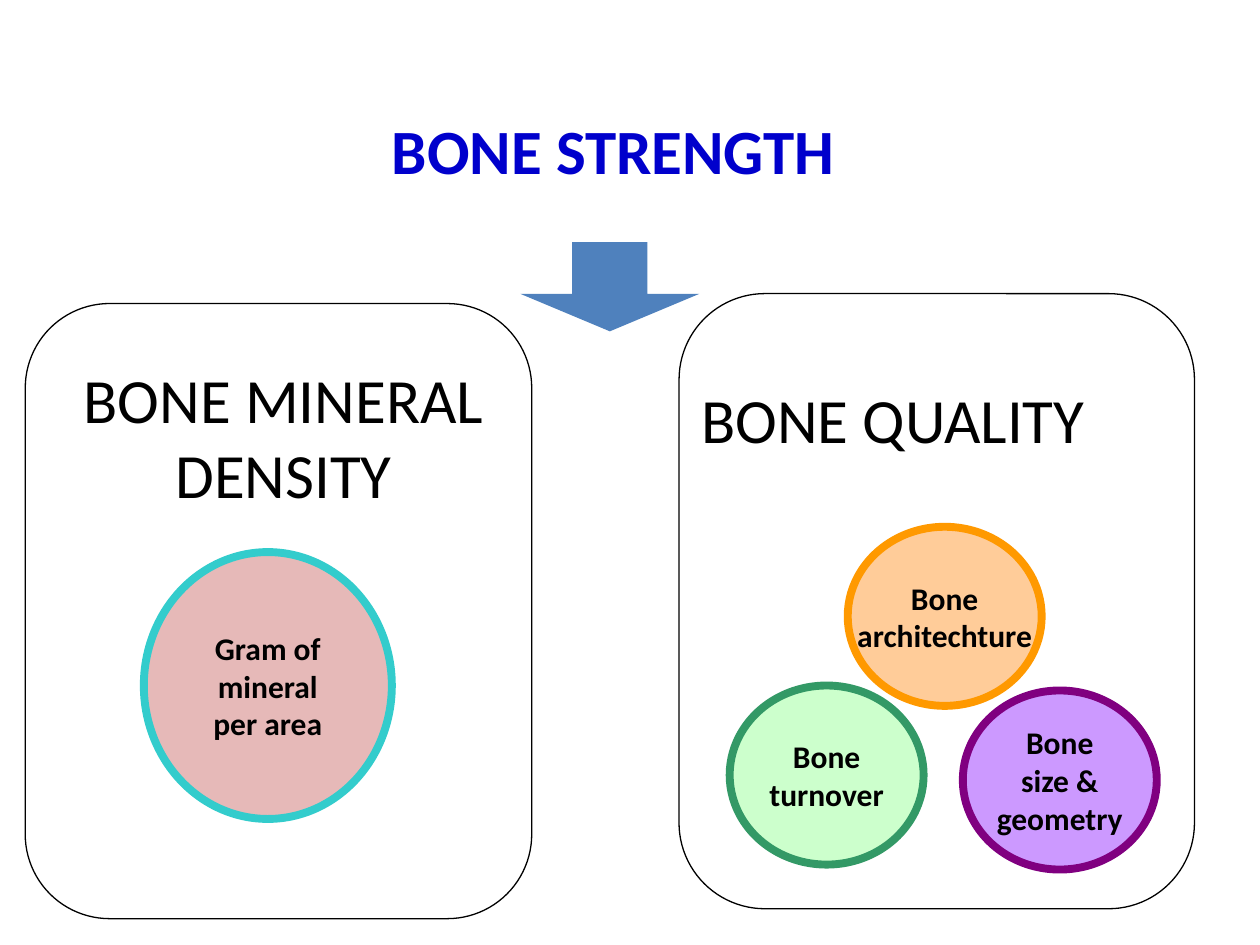
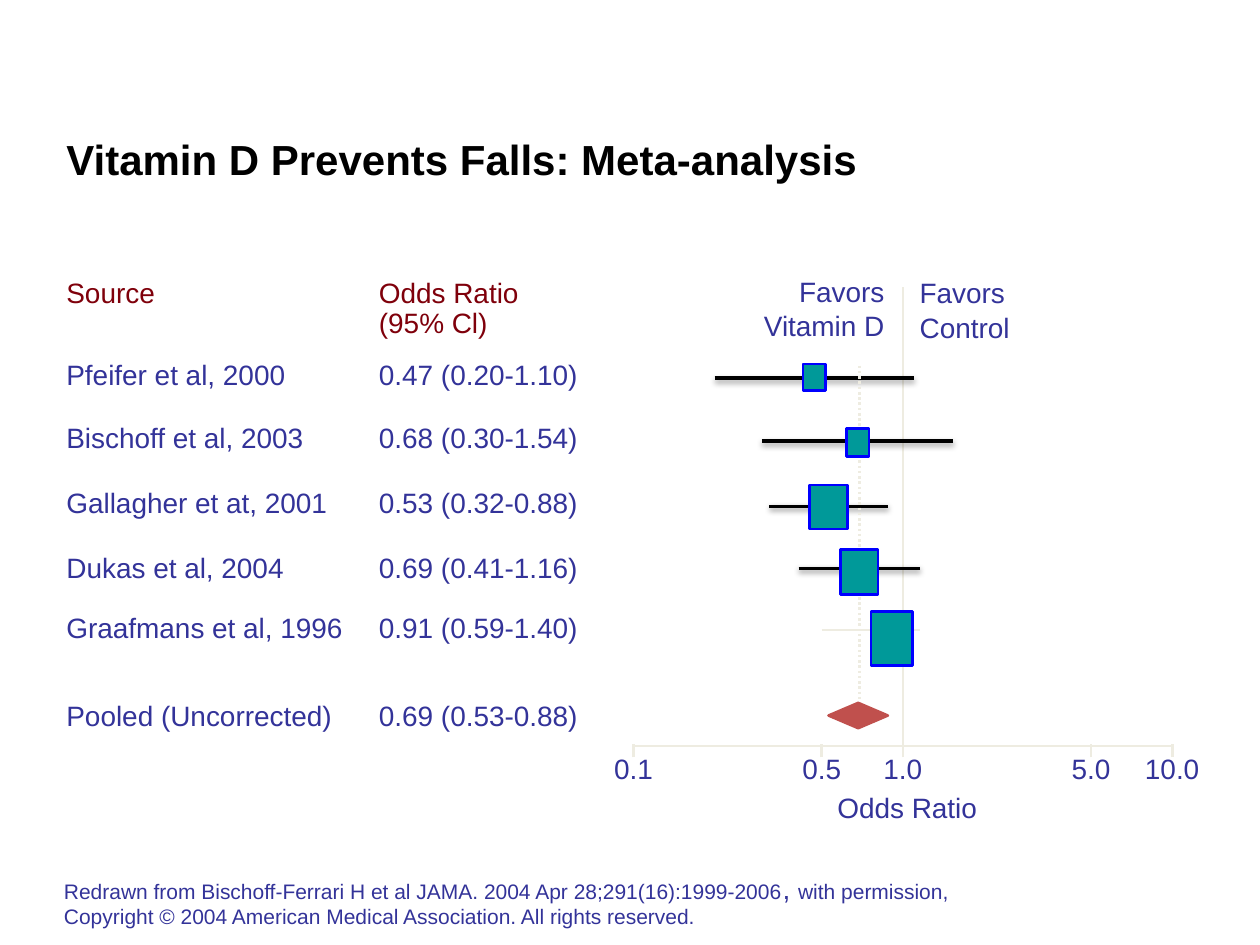
from dataclasses import dataclass
from math import log10
from typing import Optional, Sequence

from lxml.etree import SubElement
from pptx import Presentation
from pptx.dml.color import RGBColor
from pptx.enum.dml import MSO_LINE
from pptx.enum.shapes import MSO_CONNECTOR, MSO_SHAPE
from pptx.enum.text import MSO_ANCHOR, PP_ALIGN
from pptx.oxml.ns import qn
from pptx.util import Cm, Pt

COLORS = {
    "white": "FFFFFF", "black": "000000", "title": "0000CC", "arrow": "4F81BD",
    "rose": "E6B9B8", "teal_ring": "33CCCC",
    "peach": "FFCC99", "orange": "FF9900",
    "lilac": "CC99FF", "purple": "800080",
    "mint": "CCFFCC", "green": "339966",
    "heading": "7F000B", "body": "333399", "axis": "EEECE1",
    "marker": "009999", "marker_line": "0000FF", "pooled": "C0504D",
}


@dataclass(frozen=True)
class Box:
    x: float
    y: float
    w: float
    h: float


@dataclass(frozen=True)
class TextStyle:
    size: float
    font: str = "Arial"
    color: str = "body"
    bold: bool = False
    align: PP_ALIGN = PP_ALIGN.LEFT
    anchor: MSO_ANCHOR = MSO_ANCHOR.TOP
    spacing: Optional[float] = None
    gap: float = 0
    wrap: bool = True


@dataclass(frozen=True)
class Factor:
    lines: tuple[str, ...]
    box: Box
    fill: str
    ring: str


@dataclass(frozen=True)
class Study:
    source: str
    ratio: float
    low: float
    high: float
    label_y: float
    line_y: float
    marker: Box
    color: str = "black"
    drawn: Optional[tuple[float, float]] = None


PANEL_TEXT = TextStyle(36, "Calibri", "black")
PANEL_CENTER = TextStyle(36, "Calibri", "black", align=PP_ALIGN.CENTER)
STRENGTH_TITLE = TextStyle(36, "Calibri", "title", True)
FACTOR_TEXT = TextStyle(18, "Calibri", "black", True, PP_ALIGN.CENTER, MSO_ANCHOR.MIDDLE, wrap=False)
FALLS_TITLE = TextStyle(24, color="black", bold=True)


def plot_style(color: str = "body", align: PP_ALIGN = PP_ALIGN.LEFT) -> TextStyle:
    return TextStyle(16, color=color, align=align, anchor=MSO_ANCHOR.MIDDLE, spacing=0.6, gap=8)


PANELS = [Box(13.69, 5.92, 10.39, 12.4), Box(0.51, 6.12, 10.21, 12.4)]
FACTORS = [
    Factor(("Gram of", "mineral", "per area"), Box(2.9, 11.13, 5, 5.38), "rose", "teal_ring"),
    Factor(("Bone", "architechture"), Box(17.09, 10.62, 3.91, 3.61), "peach", "orange"),
    Factor(("Bone", "size &", "geometry"), Box(19.41, 13.92, 3.91, 3.61), "lilac", "purple"),
    Factor(("Bone", "turnover"), Box(14.71, 13.82, 3.91, 3.61), "mint", "green"),
]


def ratio_x(value: float) -> float:
    return 18.2 + 5.43 * log10(value)


def centered(x: float, y: float, w: float, h: float) -> Box:
    return Box(x - w / 2, y - h / 2, w, h)


def marker(ratio: float, y: float, w: float, h: float) -> Box:
    return centered(ratio_x(ratio), y, w, h)


STUDIES = [
    Study("Pfeifer et al, 2000", 0.47, 0.20, 1.10, 7.65, 7.62, marker(0.47, 7.61, 0.46, 0.54)),
    Study("Bischoff et al, 2003", 0.68, 0.30, 1.54, 8.92, 8.89, marker(0.68, 8.92, 0.46, 0.56)),
    Study("Gallagher et at, 2001", 0.53, 0.32, 0.88, 10.24, 10.21, marker(0.53, 10.22, 0.76, 0.89)),
    Study("Dukas et al, 2004", 0.69, 0.41, 1.16, 11.54, 11.46, marker(0.69, 11.53, 0.76, 0.91)),
    Study("Graafmans et al, 1996", 0.91, 0.59, 1.40, 12.75, 12.7, marker(0.91, 12.87, 0.84, 1.09),
          "axis", (0.5, 1.16)),
]
POOLED = Study("Pooled (Uncorrected)", 0.69, 0.53, 0.88, 14.53, 14.43,
               Box(ratio_x(0.53), 14.17, ratio_x(0.88) - ratio_x(0.53), 0.51))
TICKS = [0.1, 0.5, 1.0, 5.0, 10.0]
SOURCE_X, RATIO_X, ROW_H = 1.09, 7.39, 0.66
AXIS_Y = 15.04


def rgb(name: str) -> RGBColor:
    return RGBColor.from_string(COLORS[name])


def place(box: Box) -> tuple[Cm, Cm, Cm, Cm]:
    return Cm(box.x), Cm(box.y), Cm(box.w), Cm(box.h)


def write(sp, lines: Sequence[str], style: TextStyle):
    tf = sp.text_frame
    tf.word_wrap = style.wrap
    tf.vertical_anchor = style.anchor
    for i, line in enumerate(lines):
        p = tf.paragraphs[0] if i == 0 else tf.add_paragraph()
        p.text = line
        p.alignment = style.align
        p.space_before = Pt(style.gap if i else 0)
        if style.spacing:
            p.line_spacing = style.spacing
        p.font.name = style.font
        p.font.size = Pt(style.size)
        p.font.bold = style.bold
        p.font.color.rgb = rgb(style.color)
    return tf


def add_text(s, box: Box, lines: Sequence[str], style: TextStyle):
    return write(s.shapes.add_textbox(*place(box)), lines, style)


def add_shape(s, kind: MSO_SHAPE, box: Box, fill: str, line: Optional[str] = None, width: float = 0.75):
    sp = s.shapes.add_shape(kind, *place(box))
    sp.shadow.inherit = False
    sp.fill.solid()
    sp.fill.fore_color.rgb = rgb(fill)
    if line:
        sp.line.color.rgb = rgb(line)
        sp.line.width = Pt(width)
    else:
        sp.line.fill.background()
    return sp


def add_line(s, x1: float, y1: float, x2: float, y2: float, color: str = "axis",
             width: float = 1.5, shadow: bool = False):
    cn = s.shapes.add_connector(MSO_CONNECTOR.STRAIGHT, Cm(x1), Cm(y1), Cm(x2), Cm(y2))
    cn.line.color.rgb = rgb(color)
    cn.line.width = Pt(width)
    effects = SubElement(cn._element.spPr, qn("a:effectLst"))
    if shadow:
        outer = SubElement(effects, qn("a:outerShdw"), blurRad="40000", dist="20000",
                           dir="5400000", rotWithShape="0")
        tone = SubElement(outer, qn("a:srgbClr"), val=COLORS["black"])
        SubElement(tone, qn("a:alpha"), val="38000")
    return cn


def build_strength(s) -> None:
    for panel in PANELS:
        add_shape(s, MSO_SHAPE.ROUNDED_RECTANGLE, panel, "white", "black")
    for factor in FACTORS:
        sp = add_shape(s, MSO_SHAPE.OVAL, factor.box, factor.fill, factor.ring, 4.5)
        write(sp, factor.lines, FACTOR_TEXT)
    add_text(s, Box(13.89, 7.54, 10.21, 1.8), ["BONE QUALITY"], PANEL_TEXT)
    add_text(s, Box(0.51, 7.14, 10.41, 3.33), ["BONE MINERAL", "DENSITY"], PANEL_CENTER)
    tf = add_text(s, Box(6.3, 2.13, 11.99, 1.8), ["BONE STRENGTH"], STRENGTH_TITLE)
    tf.margin_left = Cm(1.6)
    arrow = add_shape(s, MSO_SHAPE.DOWN_ARROW, Box(10.49, 4.88, 3.61, 1.8), "arrow")
    arrow.adjustments[0] = arrow.adjustments[1] = 0.42


def add_label(s, x: float, y: float, w: float, text: str, color: str = "body") -> None:
    add_text(s, Box(x, y - ROW_H / 2, w, ROW_H), [text], plot_style(color))


def add_study_labels(s) -> None:
    for x, y, text in [(SOURCE_X, 5.99, "Source"), (RATIO_X, 5.99, "Odds Ratio"), (RATIO_X, 6.6, "(95% Cl)")]:
        add_label(s, x, y, 5.11, text, "heading")
    for study in [*STUDIES, POOLED]:
        estimate = f"{study.ratio:.2f} ({study.low:.2f}-{study.high:.2f})"
        add_label(s, SOURCE_X, study.label_y, 7.26, study.source)
        add_label(s, RATIO_X, study.label_y, 7.26, estimate)


def add_forest_plot(s) -> None:
    add_line(s, ratio_x(1), 5.79, ratio_x(1), AXIS_Y)
    add_line(s, ratio_x(TICKS[0]), AXIS_Y, ratio_x(TICKS[-1]), AXIS_Y)
    for tick in TICKS:
        add_line(s, ratio_x(tick), 15.27, ratio_x(tick), 14.99)
    for study in STUDIES:
        low, high = study.drawn or (study.low, study.high)
        solid = study.color == "black"
        add_line(s, ratio_x(low), study.line_y, ratio_x(high), study.line_y,
                 study.color, 2 if solid else 1.5, solid)
    pooled_line = add_line(s, ratio_x(POOLED.ratio), 7.37, ratio_x(POOLED.ratio), 14.2)
    pooled_line.line.dash_style = MSO_LINE.ROUND_DOT
    for study in STUDIES:
        add_shape(s, MSO_SHAPE.RECTANGLE, study.marker, "marker", "marker_line", 1.5)
    add_shape(s, MSO_SHAPE.FLOWCHART_DECISION, POOLED.marker, "pooled", "pooled", 1.5)

    axis_text = plot_style(align=PP_ALIGN.CENTER)
    for tick in TICKS:
        width = 1.88 if tick >= 10 else 1.5
        add_text(s, centered(ratio_x(tick), 15.6, width, ROW_H), [f"{tick:.1f}"], axis_text)
    add_text(s, centered(18.29, 16.38, 3.81, ROW_H), ["Odds Ratio"], axis_text)
    add_text(s, Box(18.29, 5.64, 2.51, 1.42), ["Favors", "Control"], plot_style())
    add_text(s, Box(14.68, 5.61, 3.4, 1.42), ["Favors", "Vitamin D"], plot_style(align=PP_ALIGN.RIGHT))


def add_citation(s) -> None:
    style = TextStyle(12, spacing=0.9)
    tf = add_text(s, Box(1.04, 17.53, 20.04, 1.35),
                  ["Redrawn from Bischoff-Ferrari H et al JAMA. 2004 Apr 28;291(16):1999-2006"], style)
    p = tf.paragraphs[0]
    r = p.add_run()
    r.text = ", "
    r.font.size = Pt(16)
    r = p.add_run()
    r.text = "with permission, Copyright © 2004 American Medical Association. All rights reserved."


def build_falls(s) -> None:
    add_text(s, Box(1.09, 2.57, 16.76, 1.27), ["Vitamin D Prevents Falls: Meta-analysis"], FALLS_TITLE)
    add_study_labels(s)
    add_forest_plot(s)
    add_citation(s)


def main() -> None:
    prs = Presentation()
    prs.slide_width, prs.slide_height = Cm(25.4), Cm(19.05)
    for build in (build_strength, build_falls):
        build(prs.slides.add_slide(prs.slide_layouts[6]))
    prs.save("out.pptx")


if __name__ == "__main__":
    main()
